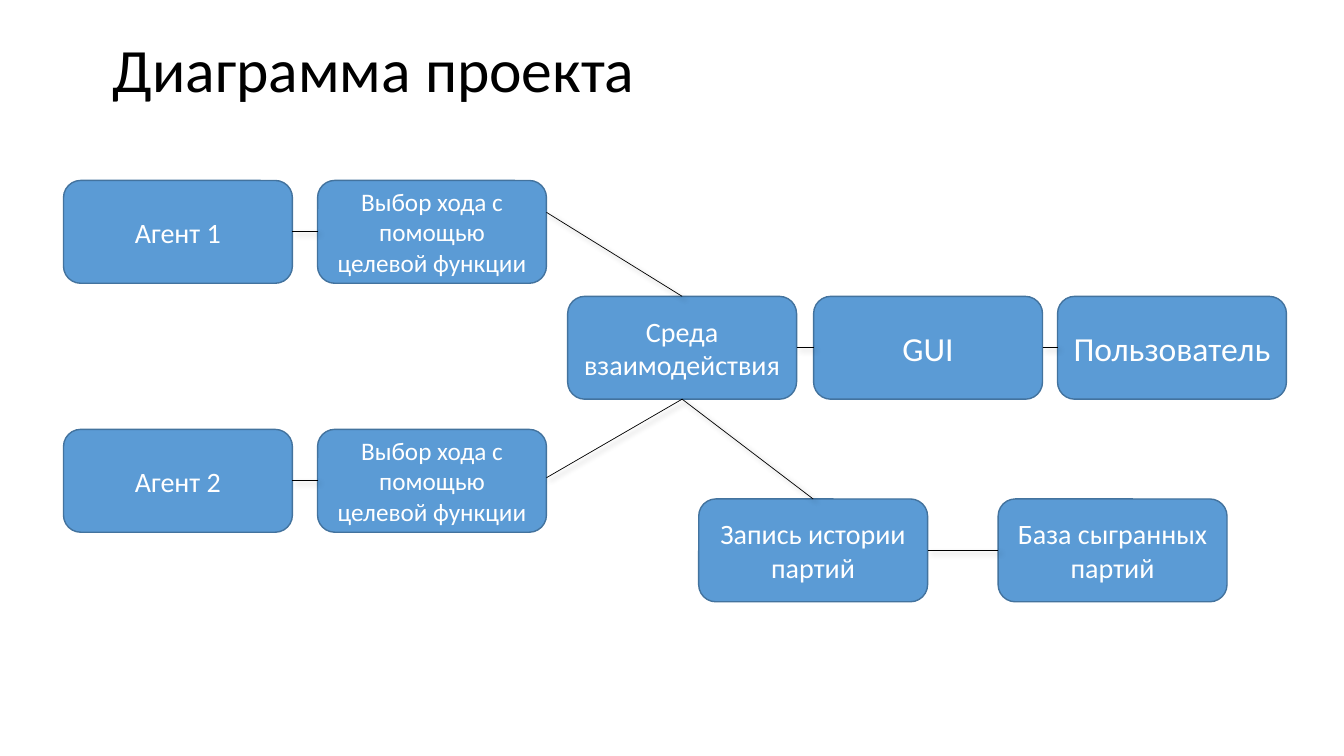
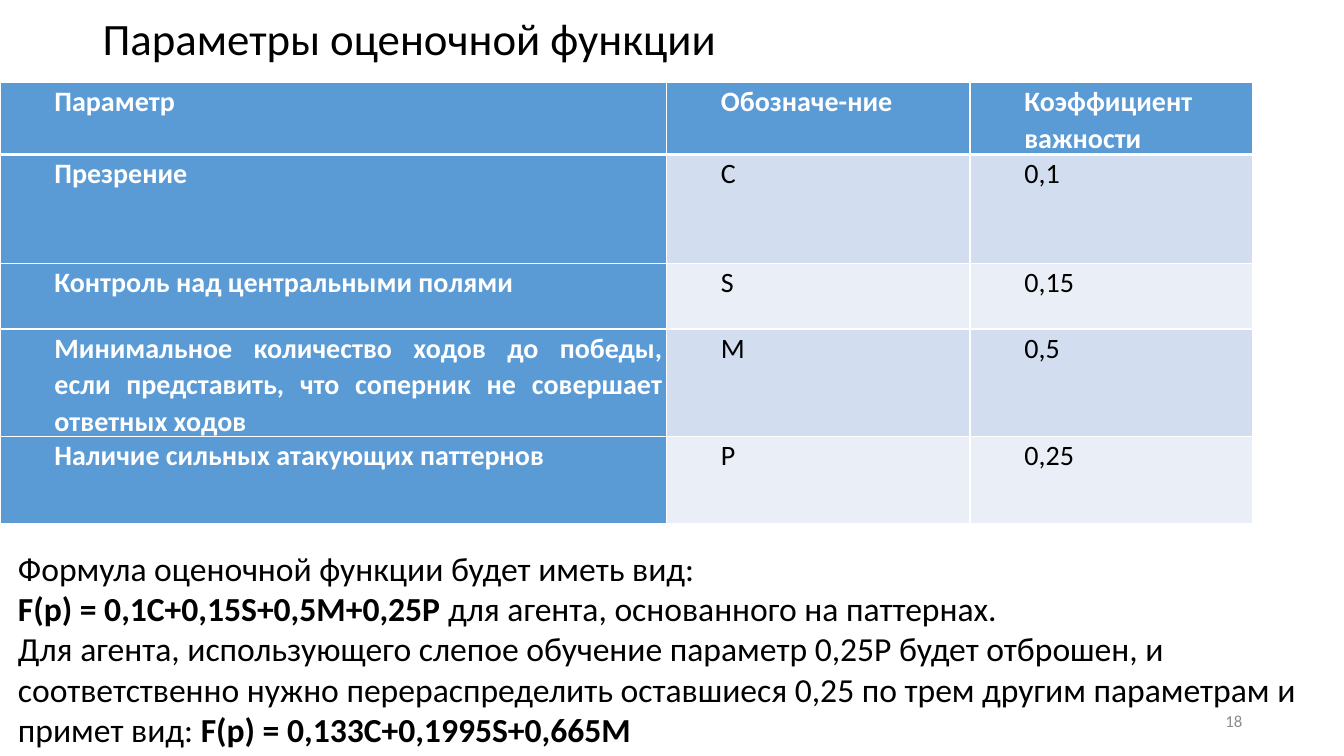
from lxml import etree
from pptx import Presentation, util as u
from pptx.dml.color import RGBColor
from pptx.enum import shapes, text
from pptx.oxml import parse_xml
from pptx.oxml.ns import nsdecls

WIDTH, HEIGHT = u.Inches(13.33), u.Inches(7.5)
FONT = "Calibri"
BLACK, WHITE, GRAY = "000000", "FFFFFF", "8C8C8C"
BLUE, BLUE_EDGE = "5B9BD5", "43739E"
BANDS = ("D2DEEF", "EAEFF7")
ALIGN = text.PP_ALIGN
MIDDLE = text.MSO_ANCHOR.MIDDLE

BOX_WIDTH, BOX_HEIGHT = 17.03, 13.6
MAIN_COLUMNS = (4.73, 23.63, 42.24, 60.54, 78.69)
HISTORY_COLUMNS = (51.99, 74.27)
AGENT_ROWS = (23.87, 56.8)
MAIN_ROW, HISTORY_ROW = 39.2, 66

TOP, LEFT, BOTTOM, RIGHT = (0.5, 0), (0, 0.5), (0.5, 1), (1, 0.5)
SITES = (TOP, LEFT, BOTTOM, RIGHT)

CHOICE = "Выбор хода с помощью целевой функции"
TABLE_COLUMNS = (49.59, 22.58, 21.01)
TABLE_ROWS = (8.67, 14.4, 8.67, 11.47, 11.47)
PARAMETERS = (
    ("Параметр", "Обозначе-ние", "Коэффициент\nважности"),
    ("Презрение", "С", "0,1"),
    ("Контроль над центральными полями", "S", "0,15"),
    ("Минимальное количество ходов до победы, если представить, "
     "что соперник не совершает ответных ходов", "M", "0,5"),
    ("Наличие сильных атакующих паттернов", "P", "0,25"),
)
FORMULAS = (
    (("Формула оценочной функции будет иметь вид:", False),),
    (("F(p) = 0,1C+0,15S+0,5M+0,25P ", True),
     ("для агента, основанного на паттернах.", False)),
    (("Для агента, использующего слепое обучение параметр 0,25P будет отброшен, "
      "и соответственно нужно перераспределить оставшиеся 0,25 по трем другим "
      "параметрам и примет вид: ", False),
     ("F(p) = 0,133C+0,1995S+0,665M", True)),
)


def across(share):
    return round(WIDTH * share / 100)


def down(share):
    return round(HEIGHT * share / 100)


def area(left, top, width, height):
    return across(left), down(top), across(width), down(height)


def color(value):
    return RGBColor.from_string(value)


def paint(fill, value):
    fill.solid()
    fill.fore_color.rgb = color(value)


def write(frame, content, size=20, ink=BLACK, bold=False, align=ALIGN.LEFT,
          spacing=1.0, indent=0):
    if isinstance(content, str):
        content = [((line, bold),) for line in content.split("\n")]
    frame.word_wrap = True
    for index, runs in enumerate(content):
        paragraph = frame.add_paragraph() if index else frame.paragraphs[0]
        paragraph.alignment = align
        paragraph.line_spacing = spacing
        if indent:
            properties = paragraph._p.get_or_add_pPr()
            properties.set("marL", str(u.Inches(indent)))
            properties.set("indent", "0")
        for words, strong in runs:
            run = paragraph.add_run()
            run.text = words
            run.font.name = FONT
            run.font.size = u.Pt(size)
            run.font.bold = strong
            run.font.color.rgb = color(ink)


def add_text(slide, place, content, anchor=text.MSO_ANCHOR.TOP, **style):
    frame = slide.shapes.add_textbox(*area(*place)).text_frame
    frame.vertical_anchor = anchor
    write(frame, content, **style)


def add_title(slide, left, height, content, size):
    add_text(slide, (left, 0, 86.27, height), content, anchor=MIDDLE,
             size=size, spacing=0.9)


def add_box(slide, left, top, content, size=20):
    shape = slide.shapes.add_shape(shapes.MSO_SHAPE.ROUNDED_RECTANGLE,
                                   *area(left, top, BOX_WIDTH, BOX_HEIGHT))
    shape.shadow.inherit = False
    paint(shape.fill, BLUE)
    shape.line.color.rgb = color(BLUE_EDGE)
    shape.line.width = u.Pt(1)
    shape.text_frame.vertical_anchor = MIDDLE
    write(shape.text_frame, content, size=size, ink=WHITE, align=ALIGN.CENTER)
    return shape


def point_on(shape, side):
    return (round(shape.left + shape.width * side[0]),
            round(shape.top + shape.height * side[1]))


def link(slide, start, end, start_side=RIGHT, end_side=LEFT):
    connector = slide.shapes.add_connector(
        shapes.MSO_CONNECTOR.STRAIGHT,
        *point_on(start, start_side), *point_on(end, end_side))
    if start_side in SITES:
        connector.begin_connect(start, SITES.index(start_side))
    connector.end_connect(end, SITES.index(end_side))
    connector.line.color.rgb = color(BLACK)
    connector.line.width = u.Pt(0.5)
    connector._element.spPr.append(parse_xml(
        f'<a:effectLst {nsdecls("a")}>'
        f'<a:outerShdw blurRad="{u.Pt(4)}" dist="{u.Pt(3)}" dir="{45 * 60000}" '
        f'algn="tl" rotWithShape="0"><a:srgbClr val="{BLACK}">'
        '<a:alpha val="40000"/></a:srgbClr></a:outerShdw></a:effectLst>'))


def set_borders(cell, **widths):
    properties = cell._tc.get_or_add_tcPr()
    for index, side in enumerate("LRTB"):
        properties.insert(index, parse_xml(
            f'<a:ln{side} {nsdecls("a")} w="{u.Pt(widths.get(side, 1))}">'
            f'<a:solidFill><a:srgbClr val="{WHITE}"/></a:solidFill></a:ln{side}>'))


def add_parameter_table(slide):
    place = area(0, 10.93, sum(TABLE_COLUMNS), sum(TABLE_ROWS))
    table = slide.shapes.add_table(len(TABLE_ROWS), len(TABLE_COLUMNS), *place).table
    for column, width in zip(table.columns, TABLE_COLUMNS):
        column.width = across(width)
    for row, height in zip(table.rows, TABLE_ROWS):
        row.height = down(height)
    for row, values in enumerate(PARAMETERS):
        for column, value in enumerate(values):
            cell = table.cell(row, column)
            heading = row == 0 or column == 0
            cell.margin_left = cell.margin_right = u.Inches(0.04)
            cell.margin_top = cell.margin_bottom = 0
            paint(cell.fill, BLUE if heading else BANDS[(row - 1) % 2])
            set_borders(cell, T=3 if row == 1 else 1, B=3 if row == 0 else 1)
            write(cell.text_frame, value, ink=WHITE if heading else BLACK,
                  bold=heading, align=ALIGN.JUSTIFY, spacing=1.07, indent=0.5)


def build_diagram(slide):
    add_title(slide, 7.65, 19.33, "Диаграмма проекта", 44)
    environment, interface, user = (
        add_box(slide, left, MAIN_ROW, content, size)
        for left, content, size in zip(
            MAIN_COLUMNS[2:], ("Среда взаимодействия", "GUI", "Пользователь"),
            (20, 24, 24)))
    history, database = (
        add_box(slide, left, HISTORY_ROW, content)
        for left, content in zip(
            HISTORY_COLUMNS, ("Запись истории партий", "База сыгранных партий")))
    exits = ((1, 0.31), (1, 0.47))
    for number, (top, exit_side, entry) in enumerate(
            zip(AGENT_ROWS, exits, (TOP, BOTTOM)), 1):
        agent = add_box(slide, MAIN_COLUMNS[0], top, f"Агент {number}")
        choice = add_box(slide, MAIN_COLUMNS[1], top, CHOICE, 18)
        link(slide, agent, choice)
        link(slide, choice, environment, exit_side, entry)
    link(slide, environment, interface)
    link(slide, interface, user)
    link(slide, environment, history, BOTTOM, TOP)
    link(slide, history, database)


def build_parameters(slide):
    add_title(slide, 6.9, 10.93, "Параметры оценочной функции", 32)
    add_parameter_table(slide)
    add_text(slide, (70.67, 92.67, 22.5, 5.33), "18", anchor=MIDDLE,
             size=12, ink=GRAY, align=ALIGN.RIGHT)
    add_text(slide, (0.6, 71.8, 98.87, 28.2), FORMULAS, size=24)


def main():
    presentation = Presentation()
    presentation.slide_width, presentation.slide_height = WIDTH, HEIGHT
    for build in (build_diagram, build_parameters):
        build(presentation.slides.add_slide(presentation.slide_layouts[6]))
    presentation.save("out.pptx")


if __name__ == "__main__":
    main()
